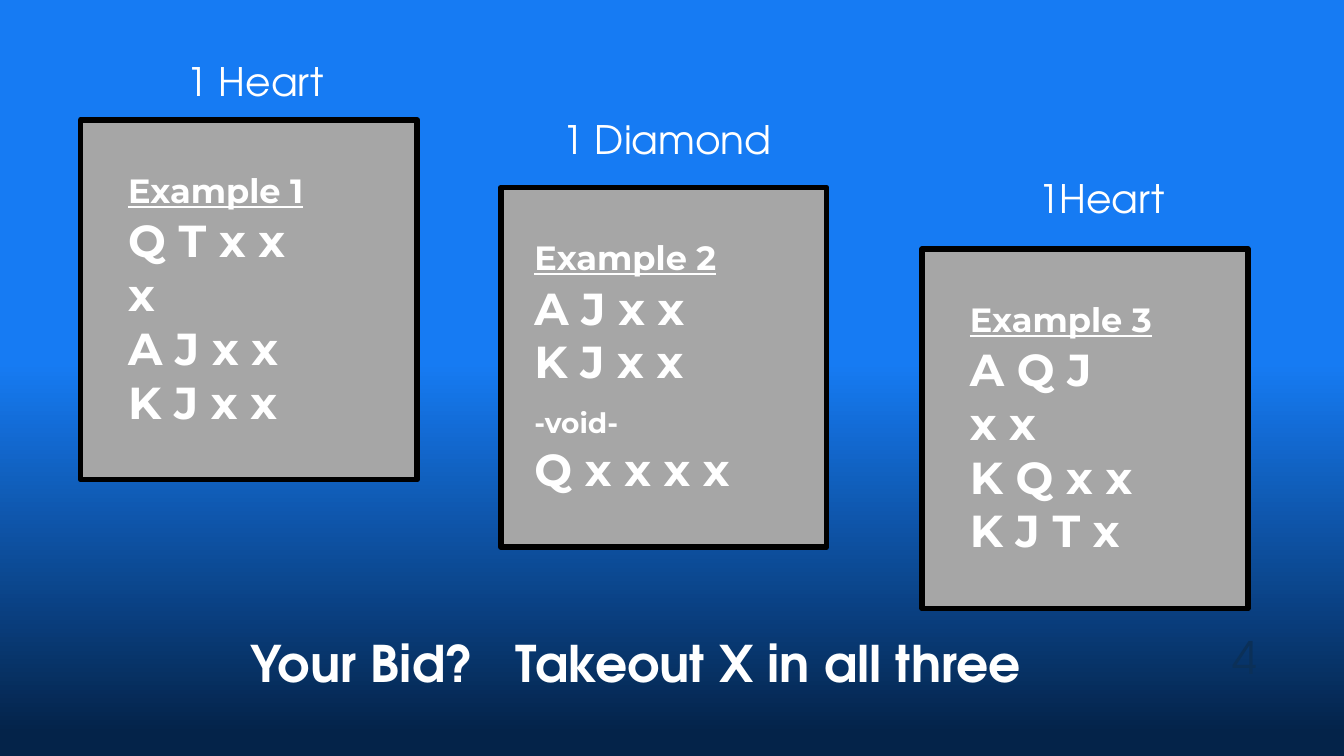
import copy
import dataclasses

import pptx
import pptx.dml.color
import pptx.enum.shapes
import pptx.enum.text
import pptx.oxml.ns
import pptx.util

Pt = pptx.util.Pt
ALIGN = pptx.enum.text.PP_ALIGN
ANCHOR = pptx.enum.text.MSO_ANCHOR


@dataclasses.dataclass(frozen=True)
class Theme:
    heading_font: str = "TeX Gyre Adventor"
    card_font: str = "Montserrat"
    sky: str = "167BF3"
    night: str = "042349"
    card: str = "A6A6A6"
    outline: str = "000000"
    text: str = "FFFFFF"
    number: str = "0B3058"
    title_size: int = 36
    number_size: int = 32
    hand_size: int = 32
    label_size: int = 28
    example_size: int = 24
    void_size: int = 20
    line_pitch: float = 38.4


def color(value):
    return pptx.dml.color.RGBColor.from_string(value)


class SlideBuilder:
    def __init__(self, slide, theme):
        self.slide = slide
        self.theme = theme

    def background(self):
        fill = self.slide.background.fill
        fill.gradient()
        fill.gradient_angle = 270
        stop_list = self.slide.element.find(".//" + pptx.oxml.ns.qn("a:gsLst"))
        stop_list.insert(0, copy.deepcopy(stop_list[0]))
        theme = self.theme
        stops = ((0, theme.sky), (0.48, theme.sky), (0.97, theme.night))
        for stop, (position, value) in zip(fill.gradient_stops, stops):
            stop.position = position
            stop.color.rgb = color(value)

    def format_paragraph(self, paragraph, font_name, size, value, bold=False, align=ALIGN.LEFT):
        paragraph.alignment = align
        for run in paragraph.runs:
            run.font.name = font_name
            run.font.size = Pt(size)
            run.font.bold = bold
            run.font.color.rgb = color(value)

    def fill_line(self, shape, text, size, value, bold=False, align=ALIGN.LEFT):
        frame = shape.text_frame
        frame.text = text
        frame.word_wrap = True
        frame.auto_size = pptx.enum.text.MSO_AUTO_SIZE.NONE
        frame.vertical_anchor = ANCHOR.TOP
        self.format_paragraph(
            frame.paragraphs[0], self.theme.heading_font, size, value, bold, align
        )

    def title(self, text, left, top, width, height):
        shape = self.slide.shapes.title
        shape.left, shape.top = Pt(left), Pt(top)
        shape.width, shape.height = Pt(width), Pt(height)
        self.fill_line(shape, text, self.theme.title_size, self.theme.text, bold=True)
        shape.text_frame.paragraphs[0].line_spacing = 1.0
        shape.text_frame.paragraphs[0].space_before = Pt(0)

    def label(self, text, left, top, width):
        shape = self.slide.shapes.add_textbox(Pt(left), Pt(top), Pt(width), Pt(41))
        self.fill_line(shape, text, self.theme.label_size, self.theme.text)

    def page_number(self, text, left, top, width, height):
        shape = self.slide.shapes.add_textbox(Pt(left), Pt(top), Pt(width), Pt(height))
        self.fill_line(
            shape, text, self.theme.number_size, self.theme.number, align=ALIGN.RIGHT
        )

    def card(self, example, hand, left, top, width, indent):
        theme = self.theme
        shape = self.slide.shapes.add_shape(
            pptx.enum.shapes.MSO_SHAPE.RECTANGLE, Pt(left), Pt(top), Pt(width), Pt(257)
        )
        shape.shadow.inherit = False
        shape.fill.solid()
        shape.fill.fore_color.rgb = color(theme.card)
        shape.line.color.rgb = color(theme.outline)
        shape.line.width = Pt(4)
        frame = shape.text_frame
        frame.text = "\n".join([example, *hand])
        frame.word_wrap = True
        frame.vertical_anchor = ANCHOR.TOP
        frame.margin_left, frame.margin_top = Pt(indent), Pt(28)
        frame.margin_right = frame.margin_bottom = Pt(7.2)
        sizes = {example: theme.example_size, "-void-": theme.void_size}
        for paragraph in frame.paragraphs:
            size = sizes.get(paragraph.text, theme.hand_size)
            drop = 0 if size == theme.hand_size else 2
            paragraph.line_spacing = Pt(theme.line_pitch - drop)
            paragraph.space_after = Pt(drop)
            self.format_paragraph(paragraph, theme.card_font, size, theme.text, bold=True)
        frame.paragraphs[0].runs[0].font.underline = True


def main():
    presentation = pptx.Presentation()
    presentation.slide_width = Pt(960)
    presentation.slide_height = Pt(540)
    slide = presentation.slides.add_slide(presentation.slide_layouts[5])
    builder = SlideBuilder(slide, Theme())
    builder.background()

    builder.card("Example 1", ["Q T x x", "x", "A J x x", "K J x x"], 57.6, 85.7, 240.5, 34)
    builder.card("Example 2", ["A J x x", "K J x x", "-void-", "Q x x x x"], 357.8, 133.9, 232.6, 24)
    builder.card("Example 3", ["A Q J", "x x", "K Q x x", "K J T x"], 658.8, 177.8, 232.6, 34)

    builder.label("1 Heart", 126, 37.4, 209.5)
    builder.label("1 Diamond", 394.6, 78.5, 202.3)
    builder.label("1Heart", 734.4, 121, 144)

    builder.title("Your Bid?   Takeout X in all three", 171.4, 447.8, 607.7, 51)
    builder.page_number("4", 845, 446, 60, 46)
    presentation.save("out.pptx")


if __name__ == "__main__":
    main()
